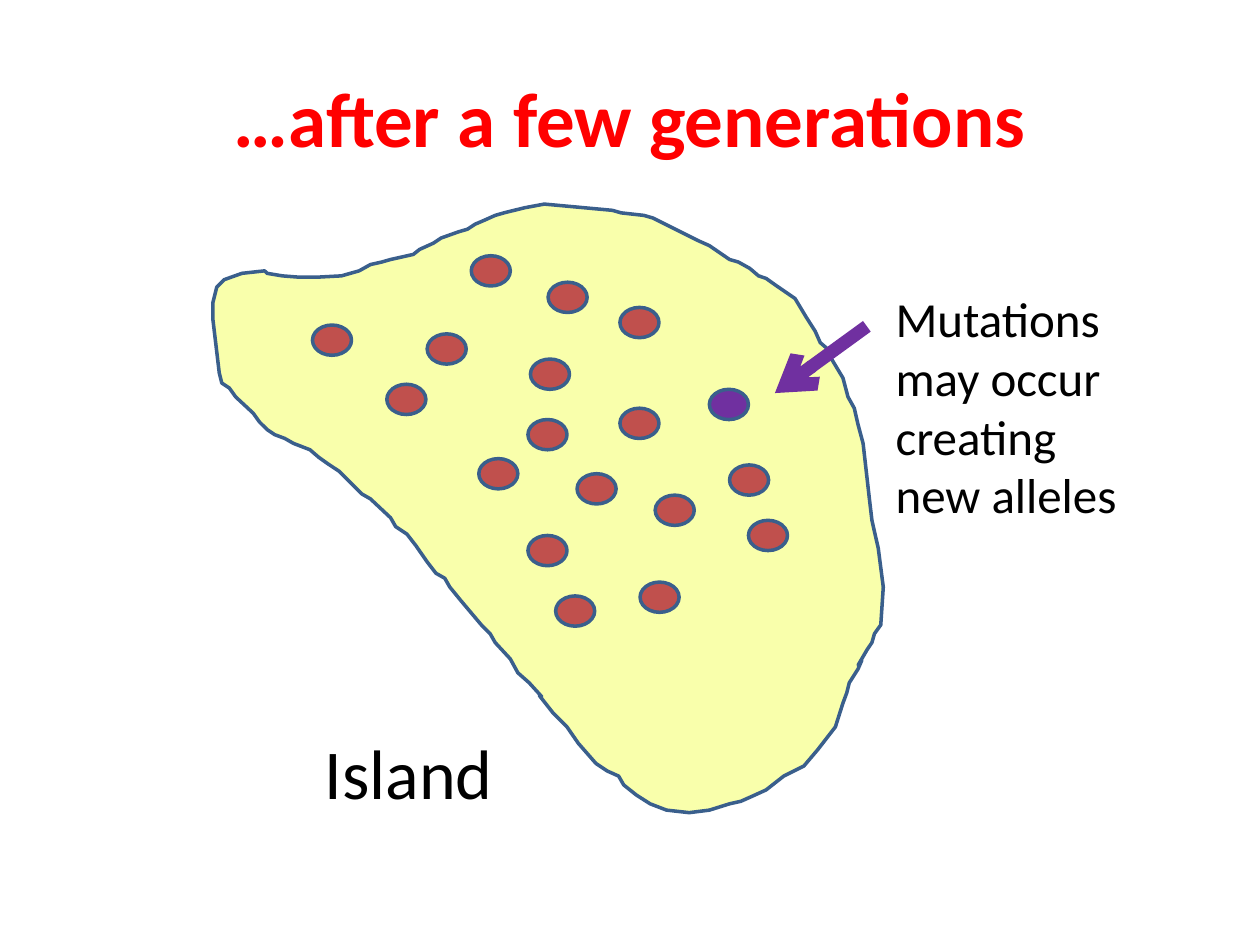
import pptx
import pptx.util
import pptx.dml.color
import pptx.enum.shapes
import pptx.enum.text
import pptx.oxml.ns
import lxml.etree

Inches, Pt = pptx.util.Inches, pptx.util.Pt
ALIGN, ANCHOR = pptx.enum.text.PP_ALIGN, pptx.enum.text.MSO_ANCHOR

COLORS = {
    "title": "FF0000", "text": "000000", "sand": "F9FFAB",
    "edge": "3A5F8C", "allele": "C0504D", "mutant": "7030A0",
}
FONT = "Calibri"
TITLE = "…after a few generations"
TITLE_BOX = (0.5, 0.3, 9, 1.25)
# words, box, size
LABELS = [
    ("Island", (2.48, 5.74, 2.44, 0.77), 40),
    ("Mutations may occur creating new alleles", (7.01, 2.24, 2.08, 1.99), 28),
]

# All spots and points are in inches from the slide's top left corner.
DOT = (0.31, 0.24)
DOTS = {
    "allele": [
        (4.35, 2.24), (4.92, 2.44), (3.39, 2.65), (4.19, 3.33), (3.8, 3.64),
        (5.94, 4.13), (5.79, 3.69), (4.19, 4.25), (5.08, 4.62), (2.48, 2.58),
        (3.74, 2.03), (4.21, 2.85), (3.07, 3.05), (4.58, 3.76), (4.92, 3.24),
        (5.2, 3.93), (4.41, 4.73),
    ],
    "mutant": [(5.63, 3.09)],
}
ARROW = {"start": (6.88, 2.59), "end": (6.15, 3.12)}

# The stretches follow one another clockwise.
COAST = {
    "north": [
        (2.1, 2.15), (2.12, 2.17), (2.24, 2.19), (2.37, 2.2), (2.52, 2.2),
        (2.71, 2.19), (2.85, 2.15), (2.94, 2.1), (3.03, 2.08), (3.1, 2.06),
        (3.28, 2.02), (3.33, 1.98), (3.44, 1.93), (3.5, 1.89), (3.64, 1.84),
        (3.71, 1.82), (3.77, 1.78), (3.84, 1.75), (3.93, 1.71), (4, 1.69),
        (4.16, 1.65), (4.32, 1.62), (4.86, 1.67), (4.93, 1.69), (5.11, 1.71),
    ],
    "east": [
        (5.18, 1.73), (5.36, 1.82), (5.54, 1.91), (5.63, 1.95), (5.79, 2.06),
        (5.86, 2.08), (5.95, 2.13), (6.02, 2.19), (6.08, 2.21), (6.15, 2.26),
        (6.31, 2.37), (6.4, 2.52), (6.47, 2.63), (6.51, 2.72), (6.58, 2.78),
        (6.6, 2.85), (6.69, 3), (6.73, 3.15), (6.78, 3.24), (6.81, 3.37),
        (6.85, 3.52), (6.9, 3.96), (6.92, 4.13), (6.94, 4.22), (6.97, 4.35),
        (7.01, 4.66), (6.99, 4.96), (6.94, 5.03), (6.92, 5.1), (6.88, 5.16),
        (6.81, 5.28), (6.84, 5.24), (6.81, 5.31), (6.74, 5.42), (6.72, 5.5),
    ],
    "south": [
        (6.69, 5.58), (6.63, 5.77), (6.49, 5.95), (6.38, 6.08), (6.22, 6.16),
        (6.08, 6.27), (5.97, 6.32), (5.88, 6.36), (5.79, 6.38), (5.63, 6.43),
        (5.47, 6.45), (5.29, 6.43), (5.16, 6.38), (5.05, 6.31), (4.95, 6.23),
        (4.91, 6.16), (4.82, 6.12), (4.73, 6.06), (4.59, 5.9), (4.5, 5.77),
        (4.39, 5.66), (4.28, 5.52), (4.3, 5.53), (4.2, 5.42), (4.11, 5.34),
    ],
    "west": [
        (4.05, 5.23), (3.93, 5.1), (3.89, 5.03), (3.82, 4.96), (3.66, 4.77),
        (3.57, 4.66), (3.53, 4.59), (3.46, 4.55), (3.39, 4.46), (3.3, 4.33),
        (3.23, 4.24), (3.14, 4.18), (3.1, 4.11), (2.94, 3.96), (2.87, 3.92),
        (2.69, 3.74), (2.6, 3.68), (2.53, 3.63), (2.46, 3.57), (2.33, 3.52),
        (2.26, 3.48), (2.18, 3.45), (2.12, 3.41), (2.06, 3.35), (2.01, 3.28),
        (1.87, 3.15), (1.82, 3.08), (1.76, 3.04), (1.74, 2.96), (1.69, 2.54),
        (1.69, 2.4), (1.72, 2.28), (1.78, 2.22), (1.92, 2.17),
    ],
}


def color(key):
    return pptx.dml.color.RGBColor.from_string(COLORS[key])


def inch(nums):
    """Turn a tuple of inches into a list of lengths."""
    return [Inches(num) for num in nums]


def write(shape, text, size, tint="text", bold=False,
          align=ALIGN.LEFT, anchor=ANCHOR.TOP):
    frame = shape.text_frame
    frame.word_wrap = True
    frame.vertical_anchor = anchor
    para = frame.paragraphs[0]
    para.alignment = align
    run = para.add_run()
    run.text = text
    font = run.font
    font.name, font.size, font.bold = FONT, Pt(size), bold
    font.color.rgb = color(tint)


def paint(shape, fill):
    """Give a shape its fill and the common edge, without shadow."""
    shape.shadow.inherit = False
    shape.fill.solid()
    shape.fill.fore_color.rgb = color(fill)
    shape.line.color.rgb = color("edge")
    shape.line.width = Pt(2)


def head(shapes):
    title = shapes.title
    title.left, title.top, title.width, title.height = inch(TITLE_BOX)
    write(title, TITLE, 44, tint="title", bold=True,
          align=ALIGN.CENTER, anchor=ANCHOR.MIDDLE)


def island(shapes):
    """Join the coast stretches into one closed outline."""
    # The pen rounds to whole units, so points go in as full lengths.
    first, *rest = [inch(point) for side in COAST.values() for point in side]
    pen = shapes.build_freeform(*first)
    pen.add_line_segments(rest, close=True)
    paint(pen.convert_to_shape(), "sand")


def dots(shapes):
    oval = pptx.enum.shapes.MSO_SHAPE.OVAL
    for kind, spots in DOTS.items():
        for spot in spots:
            paint(shapes.add_shape(oval, *inch(spot + DOT)), kind)


def labels(shapes):
    for text, box, size in LABELS:
        write(shapes.add_textbox(*inch(box)), text, size)


def arrow(shapes, start, end):
    kind = pptx.enum.shapes.MSO_CONNECTOR.STRAIGHT
    link = shapes.add_connector(kind, *inch(start + end))
    link.line.color.rgb = color("mutant")
    link.line.width = Pt(7.5)
    qn = pptx.oxml.ns.qn
    props = link.element.spPr
    lxml.etree.SubElement(props.find(qn("a:ln")), qn("a:tailEnd"), type="arrow")
    lxml.etree.SubElement(props, qn("a:effectLst"))


def main():
    deck = pptx.Presentation()
    deck.slide_width, deck.slide_height = Inches(10), Inches(7.5)
    shapes = deck.slides.add_slide(deck.slide_layouts[5]).shapes
    for draw in (head, island, dots, labels):
        draw(shapes)
    arrow(shapes, **ARROW)
    deck.save("out.pptx")


if __name__ == "__main__":
    main()
